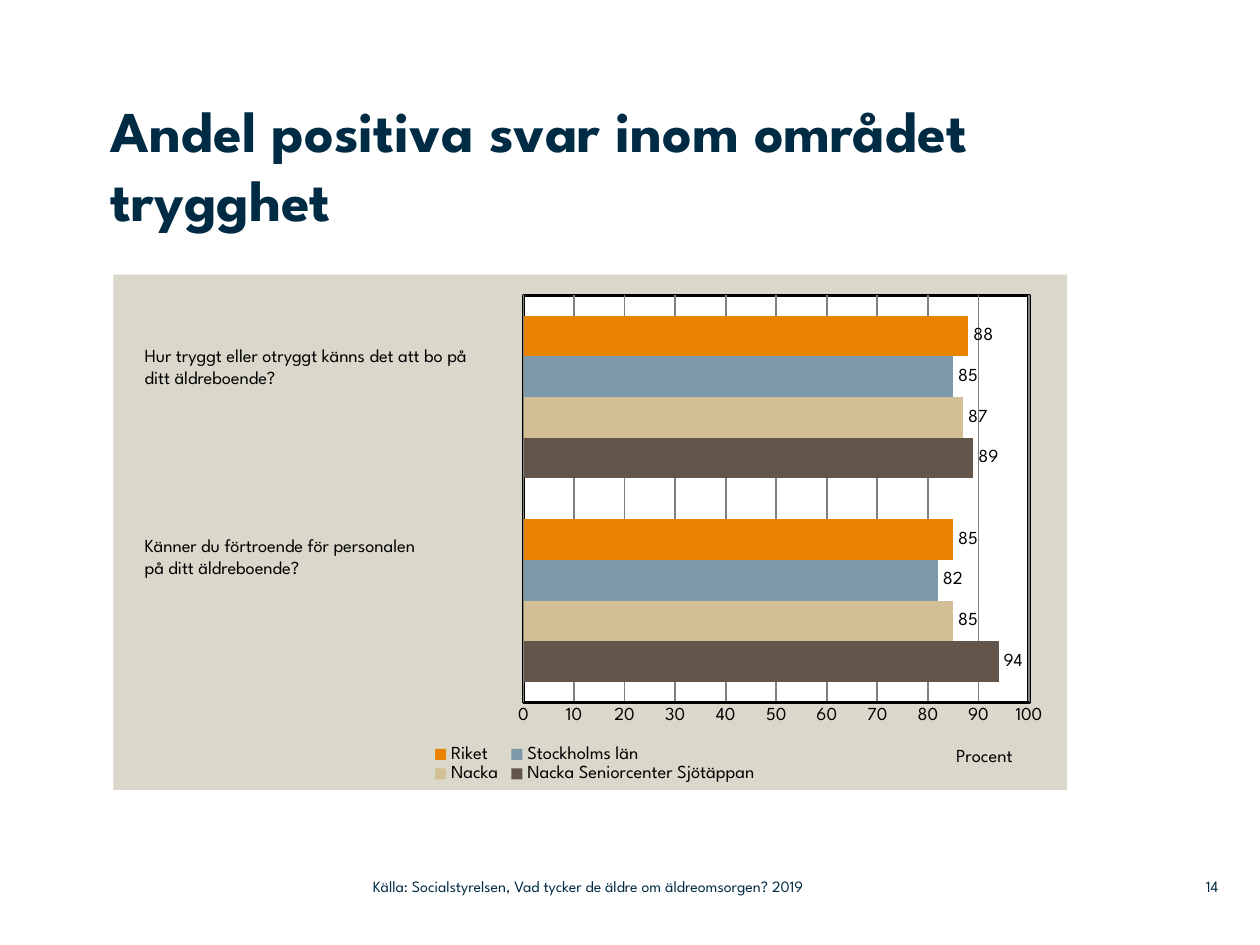
import lxml.etree
import pptx
import pptx.chart.data
import pptx.dml.color
import pptx.enum.chart
import pptx.enum.text
import pptx.oxml
import pptx.oxml.ns
import pptx.util
from pptx.util import Inches

FONT = "League Spartan"
NAVY = "002B45"
BLACK = "000000"


def paint(target, color):
    if hasattr(target, "solid"):
        target.solid()
        target = target.fore_color
    elif hasattr(target, "color"):
        target = target.color
    target.rgb = pptx.dml.color.RGBColor.from_string(color)


def place(parent, index, **settings):
    for old in parent.findall(pptx.oxml.ns.qn("c:layout")):
        parent.remove(old)
    layout = pptx.oxml.parse_xml(f"<c:layout {pptx.oxml.ns.nsdecls('c')}/>")
    manual = lxml.etree.SubElement(layout, pptx.oxml.ns.qn("c:manualLayout"))
    for name, value in settings.items():
        lxml.etree.SubElement(manual, pptx.oxml.ns.qn(f"c:{name}")).set("val", str(value))
    parent.insert(index, layout)


deck = pptx.Presentation()
deck.slide_width = Inches(10)
deck.slide_height = Inches(7.5)
page = deck.slides.add_slide(deck.slide_layouts[6])

series_list = [
    ("Nacka Seniorcenter Sjötäppan", (94, 89), "635549"),
    ("Nacka", (85, 87), "D3BF96"),
    ("Stockholms län", (82, 85), "7D9AAA"),
    ("Riket", (85, 88), "E98300"),
]
chart_data = pptx.chart.data.CategoryChartData()
chart_data.categories = ["1", "2"]
for name, values, color in series_list:
    chart_data.add_series(name, values)
chart = page.shapes.add_chart(
    pptx.enum.chart.XL_CHART_TYPE.BAR_CLUSTERED,
    Inches(0.9), Inches(2.18), Inches(7.57), Inches(4.09), chart_data,
).chart
chart.has_title = False
chart.font.name = FONT
chart.font.size = pptx.util.Pt(10.5)
paint(chart.font, BLACK)

plot = chart.plots[0]
plot.gap_width = 100
plot.vary_by_categories = False
for series, (name, values, color) in zip(plot.series, series_list):
    paint(series.format.fill, color)
    labels = series.data_labels
    labels.show_value = True
    labels.position = pptx.enum.chart.XL_LABEL_POSITION.OUTSIDE_END
    labels.font.name = FONT
    labels.font.size = pptx.util.Pt(10.5)
    paint(labels.font, BLACK)

chart.category_axis.visible = False
axis = chart.value_axis
axis.minimum_scale = 0
axis.maximum_scale = 100
axis.major_unit = 10
axis.major_tick_mark = pptx.enum.chart.XL_TICK_MARK.NONE
axis.has_major_gridlines = True
paint(axis.major_gridlines.format.line, "808080")
axis.major_gridlines.format.line.width = pptx.util.Pt(1)
paint(axis.format.line, BLACK)
axis.format.line.width = pptx.util.Pt(2)
axis.tick_labels.font.name = FONT
axis.tick_labels.font.size = pptx.util.Pt(10.5)
axis.has_title = True
axis.axis_title.text_frame.text = "Procent"
title_font = axis.axis_title.text_frame.paragraphs[0].runs[0].font
title_font.name = FONT
title_font.size = pptx.util.Pt(10.5)
title_font.bold = False
paint(title_font, BLACK)

chart.has_legend = True
chart.legend.position = pptx.enum.chart.XL_LEGEND_POSITION.BOTTOM
chart.legend.include_in_layout = False
chart.legend.font.name = FONT
chart.legend.font.size = pptx.util.Pt(10.5)

space = chart._chartSpace
plot_area = space.chart.plotArea
place(plot_area, 0, layoutTarget="inner", xMode="edge", yMode="edge",
      x=0.43, y=0.04, w=0.53, h=0.79)
place(axis.axis_title._element, 1, xMode="edge", yMode="edge", x=0.88, y=0.91)
place(chart.legend._element, 1, xMode="edge", yMode="edge", x=0.33, y=0.91, w=0.35, h=0.08)

fill_xml = (
    f"<c:spPr {pptx.oxml.ns.nsdecls('c', 'a')}>"
    '<a:solidFill><a:srgbClr val="{}"/></a:solidFill>{}</c:spPr>'
)
border = (
    f'<a:ln w="{pptx.util.Pt(2)}"><a:solidFill><a:srgbClr val="{BLACK}"/>'
    "</a:solidFill></a:ln>"
)
plot_area.append(pptx.oxml.parse_xml(fill_xml.format("FFFFFF", border)))
space.chart.addnext(
    pptx.oxml.parse_xml(fill_xml.format("DAD7CB", "<a:ln><a:noFill/></a:ln>"))
)

TOP = pptx.enum.text.MSO_ANCHOR.TOP
MIDDLE = pptx.enum.text.MSO_ANCHOR.MIDDLE
LEFT = pptx.enum.text.PP_ALIGN.LEFT
RIGHT = pptx.enum.text.PP_ALIGN.RIGHT
texts = [
    ("Andel positiva svar inom området trygghet",
     0.88, 0.75, 7.6, 1.42, 33, NAVY, True, TOP, LEFT, 0, 0),
    ("Hur tryggt eller otryggt känns det att bo på ditt äldreboende?",
     1.05, 2.68, 2.94, 0.45, 10.5, BLACK, False, TOP, LEFT, 0.1, 0.05),
    ("Känner du förtroende för personalen\npå ditt äldreboende?",
     1.05, 4.19, 2.93, 0.45, 10.5, BLACK, False, TOP, LEFT, 0.1, 0.05),
    ("14", 9.2, 6.89, 0.47, 0.29, 9, NAVY, False, MIDDLE, RIGHT, 0, 0),
    ("Källa: Socialstyrelsen, Vad tycker de äldre om äldreomsorgen? 2019",
     2.96, 6.89, 4.43, 0.29, 9, NAVY, False, MIDDLE, LEFT, 0, 0),
]
for text, left, top, width, height, size, color, bold, anchor, align, side, edge in texts:
    box = page.shapes.add_textbox(Inches(left), Inches(top), Inches(width), Inches(height))
    frame = box.text_frame
    frame.word_wrap = True
    frame.vertical_anchor = anchor
    frame.margin_left = frame.margin_right = Inches(side)
    frame.margin_top = frame.margin_bottom = Inches(edge)
    frame.text = text
    for para in frame.paragraphs:
        para.alignment = align
        for span in para.runs:
            span.font.name = FONT
            span.font.size = pptx.util.Pt(size)
            span.font.bold = bold
            paint(span.font, color)

deck.save("out.pptx")
